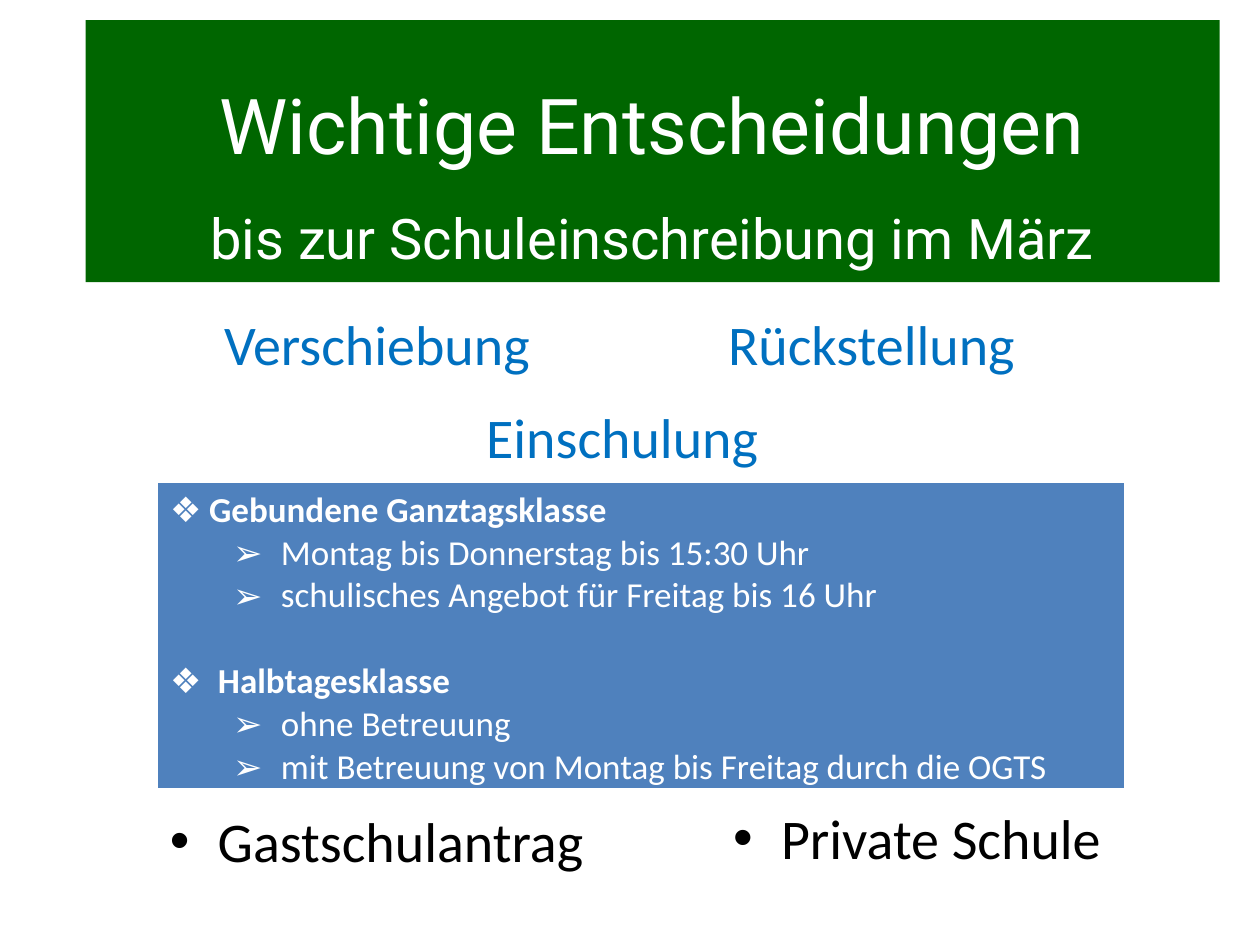
from lxml import etree
from pptx import Presentation
from pptx.dml.color import RGBColor
from pptx.enum.shapes import MSO_SHAPE
from pptx.enum.text import MSO_ANCHOR, PP_ALIGN
from pptx.oxml.ns import qn
from pptx.util import Inches, Pt

RECTANGLE = MSO_SHAPE.RECTANGLE
MIDDLE = MSO_ANCHOR.MIDDLE
CENTER = PP_ALIGN.CENTER

WHITE = RGBColor(0xFF, 0xFF, 0xFF)
BLACK = RGBColor(0x00, 0x00, 0x00)
GREEN = RGBColor(0x00, 0x66, 0x00)
TABLE_BLUE = RGBColor(0x4F, 0x81, 0xBD)
TEXT_BLUE = RGBColor(0x00, 0x70, 0xC0)

BODY_FONT = "Calibri"
TITLE_FONT = "Roboto"
HANGING = 0.38

CLASS_TYPES = [
    ("Gebundene Ganztagsklasse", 0.31, 0,
     ["Montag bis Donnerstag bis 15:30 Uhr",
      "schulisches Angebot für Freitag bis 16 Uhr"]),
    ("Halbtagesklasse", HANGING, 24.4,
     ["ohne Betreuung",
      "mit Betreuung von Montag bis Freitag durch die OGTS"]),
]


def next_paragraph(frame):
    """Return the unused first paragraph, or a new one."""
    first = frame.paragraphs[0]
    return frame.add_paragraph() if first.runs else first


def add_run(paragraph, text, size, color, font=BODY_FONT, bold=False):
    run = paragraph.add_run()
    run.text = text
    run.font.name = font
    run.font.size = Pt(size)
    run.font.bold = bold
    run.font.color.rgb = color


def set_bullet(paragraph, symbol, left, hanging):
    properties = paragraph._p.get_or_add_pPr()
    properties.set("marL", str(Inches(left)))
    properties.set("indent", str(-Inches(hanging)))
    etree.SubElement(properties, qn("a:buFont")).set("typeface", "Arial")
    etree.SubElement(properties, qn("a:buChar")).set("char", symbol)


def set_tab_stops(paragraph, stops):
    tabs = etree.SubElement(paragraph._p.get_or_add_pPr(), qn("a:tabLst"))
    for stop in stops:
        etree.SubElement(tabs, qn("a:tab"), pos=str(Inches(stop)), algn="l")


def add_text_frame(slide, left, top, width, height):
    box = slide.shapes.add_textbox(
        Inches(left), Inches(top), Inches(width), Inches(height))
    box.text_frame.word_wrap = True
    return box.text_frame


def add_school_option(slide, text, left, top, width):
    frame = add_text_frame(slide, left, top, width, 0.64)
    paragraph = frame.paragraphs[0]
    set_bullet(paragraph, "•", HANGING, HANGING)
    add_run(paragraph, text, 32, BLACK)


def set_borders(cell):
    properties = cell._tc.get_or_add_tcPr()
    for side, points in (("lnL", 1), ("lnR", 1), ("lnT", 1), ("lnB", 3)):
        line = etree.SubElement(properties, qn(f"a:{side}"), w=str(Pt(points)))
        fill = etree.SubElement(line, qn("a:solidFill"))
        etree.SubElement(fill, qn("a:srgbClr"), val=str(WHITE))


def add_class_table(slide):
    table = slide.shapes.add_table(
        1, 1, Inches(1.25), Inches(3.83), Inches(7.68), Inches(2.43)).table
    cell = table.cell(0, 0)
    set_borders(cell)
    cell.fill.solid()
    cell.fill.fore_color.rgb = TABLE_BLUE
    for name, hanging, gap, details in CLASS_TYPES:
        heading = next_paragraph(cell.text_frame)
        set_bullet(heading, "❖", hanging, hanging)
        if gap:
            heading.space_before = Pt(gap)
        add_run(heading, name, 20, WHITE, bold=True)
        for detail in details:
            item = next_paragraph(cell.text_frame)
            item.level = 1
            set_bullet(item, "➢", 0.88, HANGING)
            add_run(item, detail, 20, WHITE)


def add_title(slide):
    banner = slide.shapes.add_shape(
        RECTANGLE, Inches(0.68), Inches(0.16), Inches(9), Inches(2.08))
    banner.shadow.inherit = False
    banner.fill.solid()
    banner.fill.fore_color.rgb = GREEN
    banner.line.fill.background()
    frame = banner.text_frame
    frame.word_wrap = True
    frame.vertical_anchor = MIDDLE
    for text, size in (("Wichtige Entscheidungen", 44),
                       ("bis zur Schuleinschreibung im März", 32)):
        paragraph = next_paragraph(frame)
        paragraph.alignment = CENTER
        paragraph.line_spacing = 1.5
        add_run(paragraph, text, size, WHITE, TITLE_FONT)


def add_enrolment_choices(slide):
    frame = add_text_frame(slide, 1.18, 2.41, 8, 1.41)
    for text, stops, gap in (
            ("\tVerschiebung\tRückstellung", (0.5, 4.5), 0),
            ("\tEinschulung", (2.58,), 14.6)):
        paragraph = next_paragraph(frame)
        set_tab_stops(paragraph, stops)
        if gap:
            paragraph.space_before = Pt(gap)
        add_run(paragraph, text, 32, TEXT_BLUE)


def main():
    presentation = Presentation()
    presentation.slide_width = Inches(10)
    presentation.slide_height = Inches(7.5)
    slide = presentation.slides.add_slide(presentation.slide_layouts[6])
    add_school_option(slide, "Private Schule", 5.72, 6.33, 3.21)
    add_class_table(slide)
    add_title(slide)
    add_school_option(slide, "Gastschulantrag", 1.25, 6.35, 3.57)
    add_enrolment_choices(slide)
    presentation.save("out.pptx")


if __name__ == "__main__":
    main()
